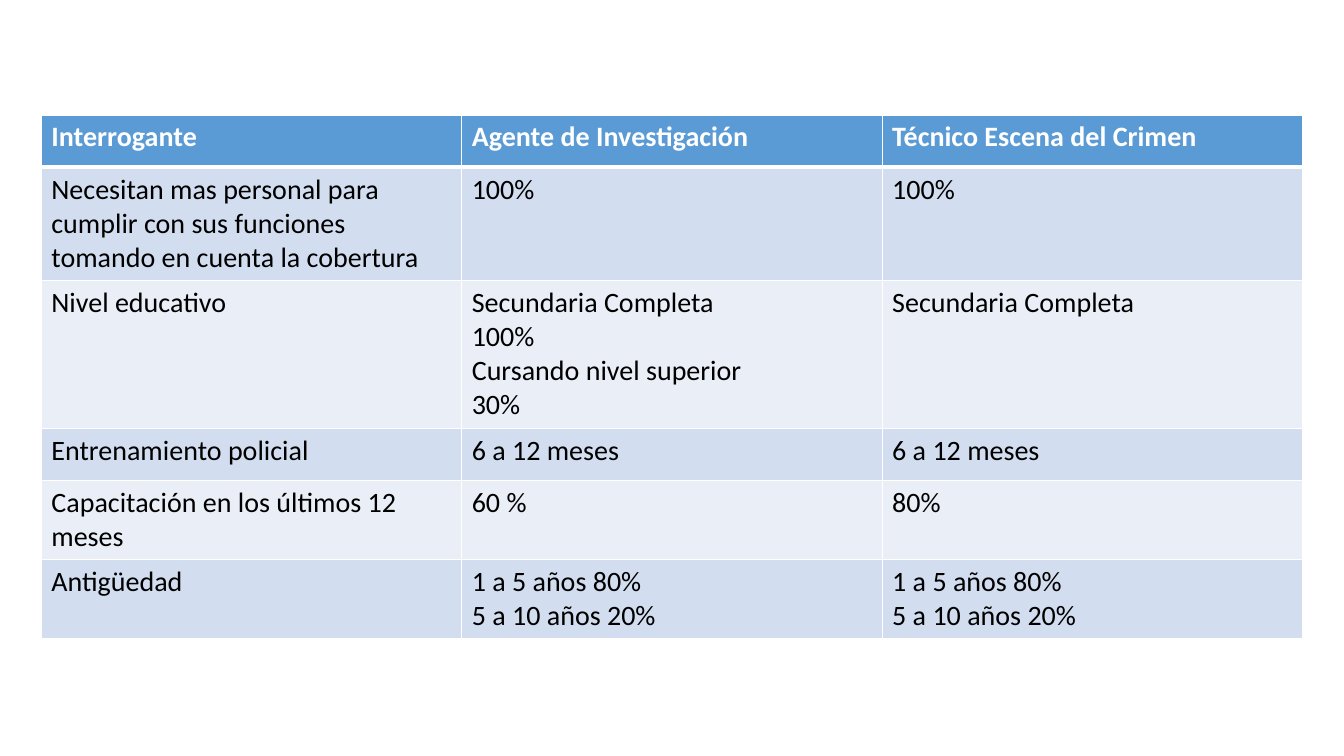
from lxml.etree import SubElement
from pptx import Presentation
from pptx.dml.color import RGBColor
from pptx.oxml.ns import qn
from pptx.util import Inches, Pt

WHITE = RGBColor(0xFF, 0xFF, 0xFF)
BLACK = RGBColor(0x00, 0x00, 0x00)
HEADER_BLUE = RGBColor(0x5B, 0x9B, 0xD5)
BAND_DARK = RGBColor(0xD2, 0xDE, 0xEF)
BAND_LIGHT = RGBColor(0xEA, 0xEF, 0xF7)

SLIDE_WIDTH, SLIDE_HEIGHT = Inches(13.33), Inches(7.5)
TABLE_LEFT, TABLE_TOP = Inches(0.41), Inches(1.14)
COLUMN_WIDTH = Inches(4.17)
ROW_HEIGHTS = [0.52, 1.1, 1.47, 0.52, 0.78, 0.78]
THIN, THICK = Pt(1), Pt(3)

HEADER_FORMAT = {"name": "Calibri", "size": Pt(20), "bold": True}
BODY_FORMAT = {**HEADER_FORMAT, "bold": False}

SURVEY_ROWS = [
    ("Interrogante", "Agente de Investigación", "Técnico Escena del Crimen"),
    ("Necesitan mas personal para cumplir con sus funciones tomando en cuenta la cobertura",
     "100%", "100%"),
    ("Nivel educativo",
     "Secundaria Completa\n100%\nCursando nivel superior\n30%",
     "Secundaria Completa"),
    ("Entrenamiento policial", "6 a 12 meses", "6 a 12 meses"),
    ("Capacitación en los últimos 12 meses", "60 %", "80%"),
    ("Antigüedad",
     "1 a 5 años 80%\n5 a 10 años 20%",
     "1 a 5 años 80%\n5 a 10 años 20%"),
]


def set_borders(cell, widths):
    properties = cell._tc.get_or_add_tcPr()
    for side, width in widths.items():
        line = SubElement(properties, qn(f"a:ln{side}"), w=str(width))
        fill = SubElement(line, qn("a:solidFill"))
        SubElement(fill, qn("a:srgbClr"), val=str(WHITE))


def write_cell(cell, text, format_values, text_color):
    cell.text_frame.text = text
    for paragraph in cell.text_frame.paragraphs:
        for attribute, value in format_values.items():
            setattr(paragraph.runs[0].font, attribute, value)
        paragraph.runs[0].font.color.rgb = text_color


def style_cell(cell, row_index):
    set_borders(cell, {
        "L": THIN,
        "R": THIN,
        "T": THICK if row_index == 1 else THIN,
        "B": THICK if row_index == 0 else THIN,
    })
    cell.fill.solid()
    if row_index == 0:
        cell.fill.fore_color.rgb = HEADER_BLUE
    else:
        cell.fill.fore_color.rgb = BAND_DARK if row_index % 2 else BAND_LIGHT


def add_survey_table(slide):
    column_count = len(SURVEY_ROWS[0])
    table = slide.shapes.add_table(
        len(SURVEY_ROWS), column_count, TABLE_LEFT, TABLE_TOP,
        COLUMN_WIDTH * column_count, Inches(sum(ROW_HEIGHTS))).table
    for column in table.columns:
        column.width = COLUMN_WIDTH
    for row_index, texts in enumerate(SURVEY_ROWS):
        table.rows[row_index].height = Inches(ROW_HEIGHTS[row_index])
        is_header = row_index == 0
        for column_index, text in enumerate(texts):
            cell = table.cell(row_index, column_index)
            style_cell(cell, row_index)
            write_cell(cell, text,
                       HEADER_FORMAT if is_header else BODY_FORMAT,
                       WHITE if is_header else BLACK)


def main():
    presentation = Presentation()
    presentation.slide_width = SLIDE_WIDTH
    presentation.slide_height = SLIDE_HEIGHT
    slide = presentation.slides.add_slide(presentation.slide_layouts[6])
    add_survey_table(slide)
    presentation.save("out.pptx")


if __name__ == "__main__":
    main()
